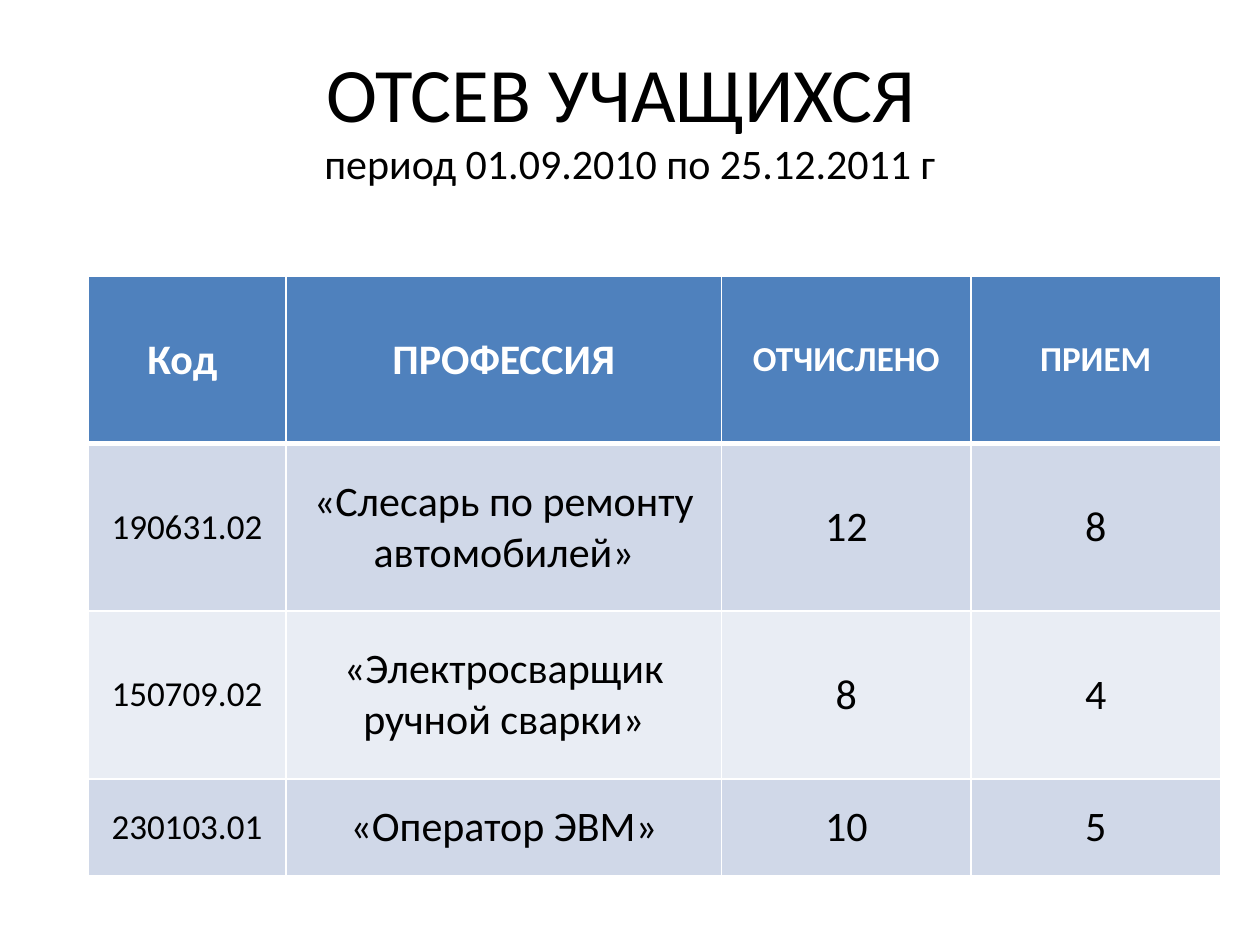
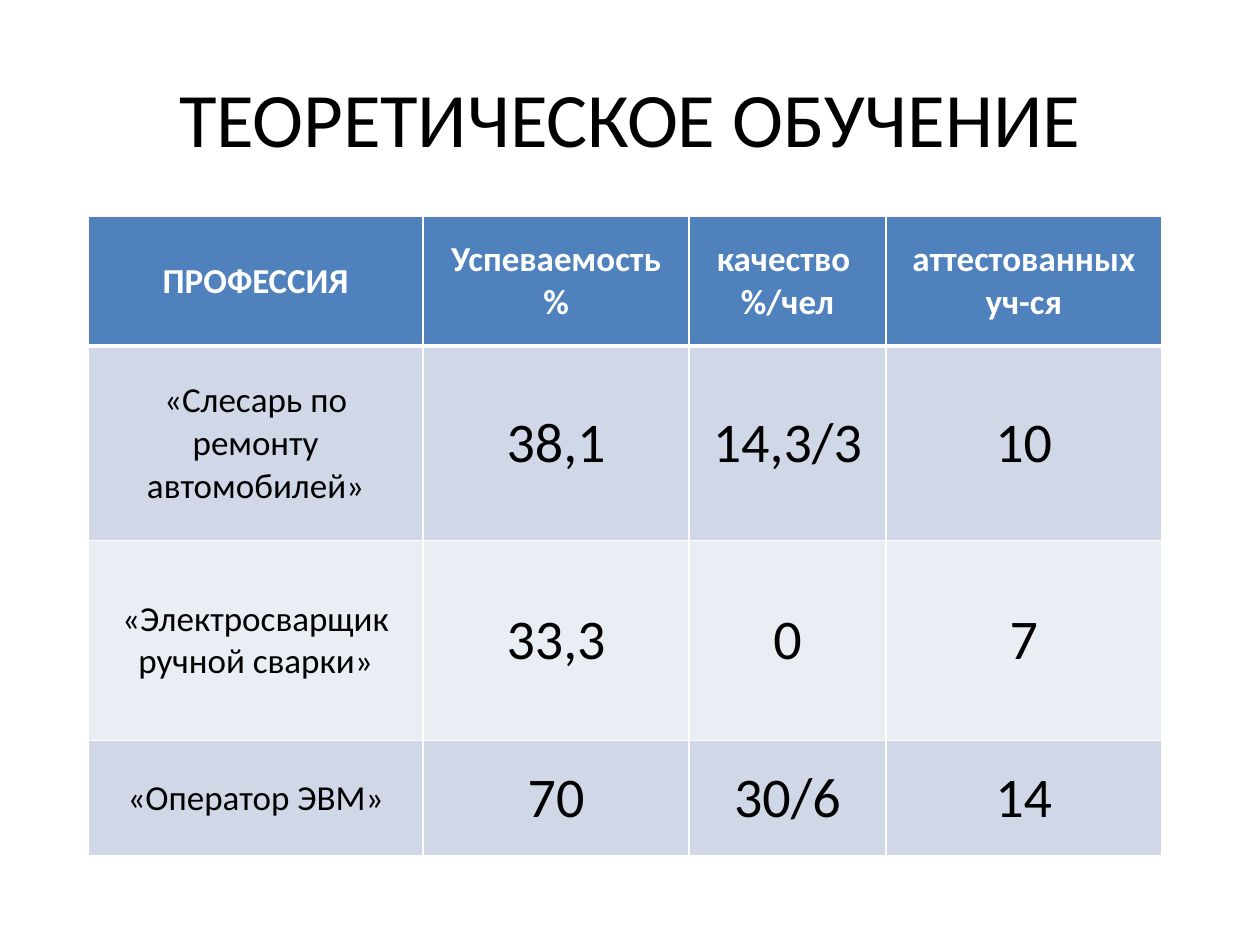
from lxml.etree import SubElement
from pptx import Presentation
from pptx.dml.color import RGBColor
from pptx.enum.text import MSO_ANCHOR, MSO_AUTO_SIZE, PP_ALIGN
from pptx.oxml.ns import qn
from pptx.util import Pt

BLACK = RGBColor(0x00, 0x00, 0x00)
WHITE = RGBColor(0xFF, 0xFF, 0xFF)
HEADER_BLUE = RGBColor(0x4F, 0x81, 0xBD)
BAND_FILLS = (RGBColor(0xD0, 0xD8, 0xE8), RGBColor(0xE9, 0xED, 0xF4))

FONT_NAME = "Calibri"
TITLE_SIZE = 44
TITLE_BOX = (36, 21.6, 648, 90)
TABLE_LEFT = 50.4
TITLE_ONLY_LAYOUT = 5

# Each title line is (text, size); a line feed in a cell starts a new paragraph.
SLIDES = [
    {
        "title": [("ОТСЕВ УЧАЩИХСЯ ", TITLE_SIZE),
                  ("период 01.09.2010 по 25.12.2011 г", 24)],
        "top": 157.7,
        "column_widths": (113, 249, 142.5, 142.5),
        "row_heights": (95.8, 95.8, 95.8, 55.4),
        "header_sizes": (24, 24, 20, 20),
        "body_sizes": (20, 24, 24, 24),
        "rows": [
            ("Код ", "ПРОФЕССИЯ", "ОТЧИСЛЕНО", "ПРИЕМ"),
            ("190631.02", "«Слесарь по ремонту автомобилей»", "12", "8"),
            ("150709.02", "«Электросварщик ручной сварки»", "8", "4"),
            ("230103.01", "«Оператор ЭВМ»", "10", "5"),
        ],
    },
    {
        "title": [("ТЕОРЕТИЧЕСКОЕ ОБУЧЕНИЕ", TITLE_SIZE)],
        "top": 123.8,
        "column_widths": (191.4, 152, 112.4, 157.7),
        "row_heights": (74, 111, 114.5, 66),
        "header_sizes": (20, 20, 20, 20),
        "body_sizes": (20, 32, 32, 32),
        "rows": [
            ("ПРОФЕССИЯ", "Успеваемость\n%", "качество \n%/чел", "аттестованных уч-ся"),
            ("«Слесарь по ремонту автомобилей»", "38,1", "14,3/3", "10"),
            ("«Электросварщик ручной сварки»", "33,3", "0", "7"),
            ("«Оператор ЭВМ»", "70", "30/6", "14"),
        ],
    },
]


def format_font(font, size, color=BLACK, bold=False):
    for name, value in {"name": FONT_NAME, "size": Pt(size), "bold": bold}.items():
        setattr(font, name, value)
    font.color.rgb = color


def add_title(slide, lines):
    title = slide.shapes.title
    for name, value in zip(("left", "top", "width", "height"), TITLE_BOX):
        setattr(title, name, Pt(value))
    frame = title.text_frame
    frame.auto_size = MSO_AUTO_SIZE.NONE
    frame.vertical_anchor = MSO_ANCHOR.MIDDLE
    paragraph = frame.paragraphs[0]
    paragraph.alignment = PP_ALIGN.CENTER
    for index, (text, size) in enumerate(lines):
        if index:
            paragraph.add_line_break()
        run = paragraph.add_run()
        run.text = text
        format_font(run.font, size)


def set_borders(cell, row_index):
    """Draw white cell edges, with a thick rule under the header row."""
    widths = {
        "L": 1,
        "R": 1,
        "T": 3 if row_index == 1 else 1,
        "B": 3 if row_index == 0 else 1,
    }
    properties = cell._tc.get_or_add_tcPr()
    for side, width in widths.items():
        line = SubElement(properties, qn(f"a:ln{side}"), w=str(Pt(width)))
        fill = SubElement(line, qn("a:solidFill"))
        SubElement(fill, qn("a:srgbClr"), val=str(WHITE))


def format_cell(cell, text, row_index, size):
    is_header = row_index == 0
    set_borders(cell, row_index)
    cell.fill.solid()
    cell.fill.fore_color.rgb = HEADER_BLUE if is_header else BAND_FILLS[(row_index - 1) % 2]
    cell.vertical_anchor = MSO_ANCHOR.MIDDLE
    cell.text = text
    for paragraph in cell.text_frame.paragraphs:
        paragraph.alignment = PP_ALIGN.CENTER
        for run in paragraph.runs:
            format_font(run.font, size, WHITE if is_header else BLACK, is_header)


def add_results_table(slide, content):
    rows, widths, heights = (content[key] for key in ("rows", "column_widths", "row_heights"))
    table = slide.shapes.add_table(
        len(rows), len(widths), Pt(TABLE_LEFT), Pt(content["top"]),
        Pt(sum(widths)), Pt(sum(heights))).table
    for column, width in zip(table.columns, widths):
        column.width = Pt(width)
    for row, height in zip(table.rows, heights):
        row.height = Pt(height)
    for row_index, texts in enumerate(rows):
        sizes = content["body_sizes" if row_index else "header_sizes"]
        for column_index, (text, size) in enumerate(zip(texts, sizes)):
            format_cell(table.cell(row_index, column_index), text, row_index, size)


def main():
    presentation = Presentation()
    presentation.slide_width = Pt(720)
    presentation.slide_height = Pt(540)
    for content in SLIDES:
        slide = presentation.slides.add_slide(presentation.slide_layouts[TITLE_ONLY_LAYOUT])
        add_title(slide, content["title"])
        add_results_table(slide, content)
    presentation.save("out.pptx")


if __name__ == "__main__":
    main()
